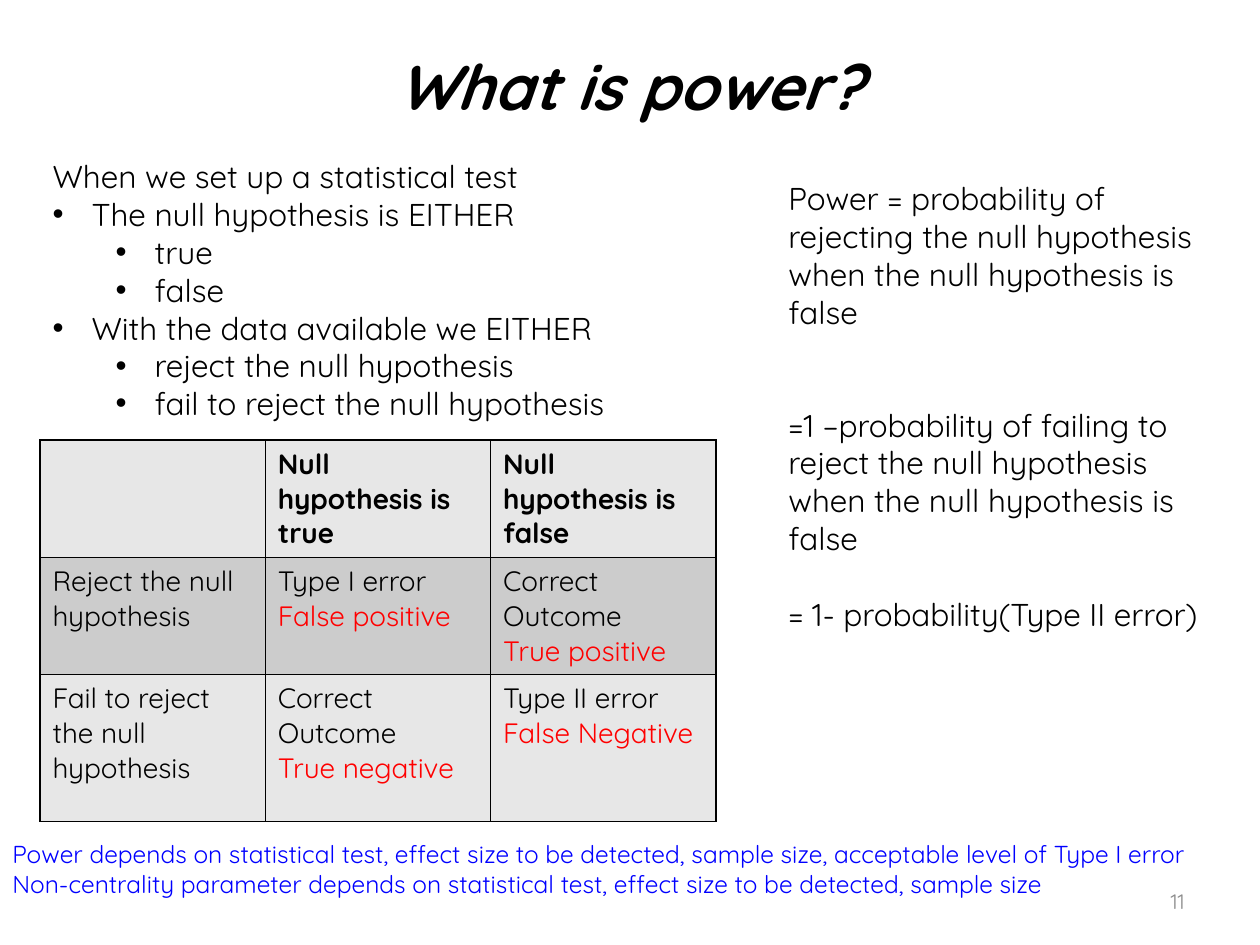
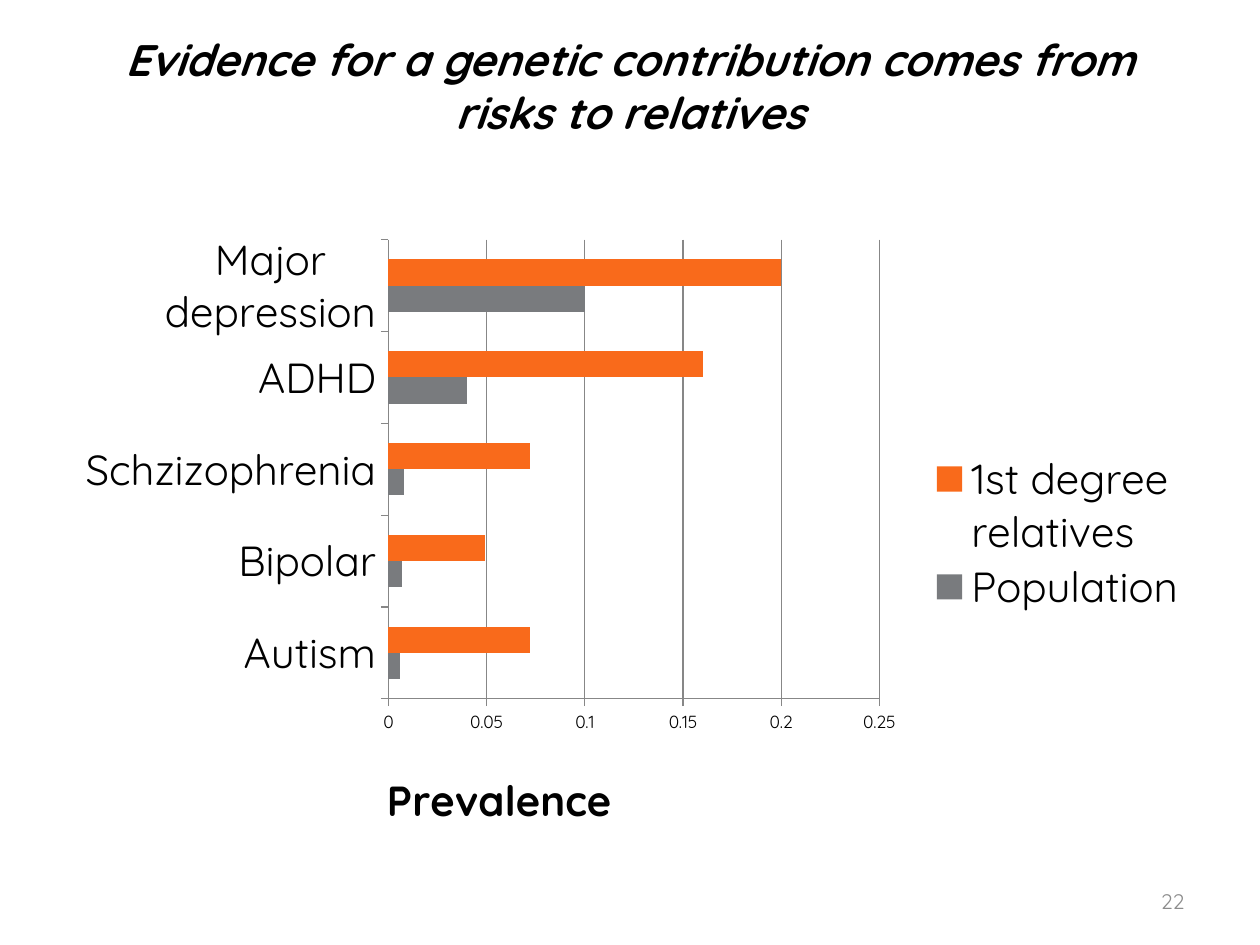
from dataclasses import dataclass

from lxml.etree import SubElement
from pptx import Presentation
from pptx.chart.data import CategoryChartData
from pptx.dml.color import RGBColor
from pptx.enum.chart import XL_CHART_TYPE, XL_LEGEND_POSITION, XL_TICK_MARK
from pptx.enum.text import MSO_ANCHOR, MSO_AUTO_SIZE, PP_ALIGN
from pptx.oxml import parse_xml
from pptx.oxml.ns import nsdecls, qn
from pptx.util import Emu, Pt

FONT = "Quicksand"
BLACK, RED, BLUE, GRAY = "000000", "FF0000", "0000FF", "8C8C8C"
LIGHT, DARK, ORANGE, SLATE, RULE = "E7E7E7", "CCCCCC", "F96A1B", "797B7E", "878787"
INCH = 126  # px to the inch
HANG = 39  # hanging indent of a bullet, px


@dataclass
class Box:
    left: int
    top: int
    width: int
    height: int

    def emu(self) -> list[Emu]:
        return [px(n) for n in (self.left, self.top, self.width, self.height)]


@dataclass
class Line:
    text: str
    level: int = -1  # -1 has no bullet
    before: int = 0  # points
    color: str = BLACK


TITLE = Box(63, 38, 1134, 94)
NUMBER = Box(903, 876, 294, 50)
PLOT = Box(388, 240, 491, 459)
KEY = Box(925, 450, 265, 166)
LABEL = Box(379, 762, 223, 46)
CHART = Box(63, 221, 1134, 624)


def px(count: float) -> Emu:
    return Emu(round(count * 914400 / INCH))


def rgb(code: str) -> RGBColor:
    return RGBColor.from_string(code)


# ---- Text ----
def style(font, size: float, color: str = BLACK, bold=False, italic=False) -> None:
    font.name, font.size = FONT, Pt(size)
    font.bold, font.italic = bold, italic
    font.color.rgb = rgb(color)


def put(para, text: str, *, align=PP_ALIGN.LEFT, before: float = 0, **form) -> None:
    para.alignment = align
    para.space_before = Pt(before)
    run = para.add_run()
    run.text = text
    style(run.font, **form)


def fill(frame, lines: list[Line], **form) -> None:
    for i, line in enumerate(lines):
        para = frame.add_paragraph() if i else frame.paragraphs[0]
        put(para, line.text, before=line.before, color=line.color, **form)


def bullet(para, level: int) -> None:
    props = para._p.get_or_add_pPr()
    if level < 0:
        props.set("marL", "0")
        props.set("indent", "0")
        SubElement(props, qn("a:buNone"))
        return
    para.level = level
    props.set("marL", str(px(HANG + 63 * level)))
    props.set("indent", str(-px(HANG)))
    SubElement(props, qn("a:buFont"), typeface="Arial")
    SubElement(props, qn("a:buChar"), char="•")


def text_box(slide, box: Box, lines: list[Line], **form):
    frame = slide.shapes.add_textbox(*box.emu()).text_frame
    frame.word_wrap = True
    fill(frame, lines, **form)
    return frame


def move(shape, box: Box) -> None:
    shape.left, shape.top, shape.width, shape.height = box.emu()
    shape.text_frame.auto_size = MSO_AUTO_SIZE.NONE


# ---- Shared slide frame ----
def start(deck, layout: int, title: str, size: float):
    slide = deck.slides.add_slide(deck.slide_layouts[layout])
    head = slide.shapes.title
    move(head, TITLE)
    head.text_frame.vertical_anchor = MSO_ANCHOR.MIDDLE
    put(head.text_frame.paragraphs[0], title, size=size, bold=True, italic=True,
        align=PP_ALIGN.CENTER)
    return slide


def number(slide, page: int) -> None:
    frame = text_box(slide, NUMBER, [Line(str(page), color=GRAY)],
                     size=12, align=PP_ALIGN.RIGHT)
    frame.vertical_anchor = MSO_ANCHOR.MIDDLE


# ---- Table ----
def border(cell) -> None:
    props = cell._tc.get_or_add_tcPr()
    for i, side in enumerate("LRTB"):
        props.insert(i, parse_xml(
            f'<a:ln{side} {nsdecls("a")} w="{Pt(1)}"><a:solidFill>'
            f'<a:srgbClr val="{BLACK}"/></a:solidFill></a:ln{side}>'))


def add_grid(slide, box: Box, highs: list[int], rows: list[list[list[Line]]]) -> None:
    table = slide.shapes.add_table(len(rows), len(rows[0]), *box.emu()).table
    table.first_row = table.horz_banding = False
    for r, (high, row) in enumerate(zip(highs, rows)):
        table.rows[r].height = px(high)
        for c, lines in enumerate(row):
            cell = table.cell(r, c)
            cell.fill.solid()
            cell.fill.fore_color.rgb = rgb(DARK if r % 2 else LIGHT)
            border(cell)
            fill(cell.text_frame, lines, size=16, bold=r == 0)


# ---- Chart ----
def place(node, index: int, box: Box, inner: bool = False, sized: bool = True) -> None:
    """Pin a chart part to a box given in slide px."""
    old = node.find(qn("c:layout"))
    if old is not None:
        node.remove(old)
    layout = parse_xml(f'<c:layout {nsdecls("c")}><c:manualLayout/></c:layout>')
    node.insert(index, layout)
    part = layout[0]
    if inner:
        SubElement(part, qn("c:layoutTarget"), val="inner")
    for axis in "xy":
        SubElement(part, qn(f"c:{axis}Mode"), val="edge")
    spots = {"x": (box.left - CHART.left) / CHART.width,
             "y": (box.top - CHART.top) / CHART.height}
    if sized:
        spots |= {"w": box.width / CHART.width, "h": box.height / CHART.height}
    for key, val in spots.items():
        SubElement(part, qn(f"c:{key}"), val=f"{val:.3f}")


def add_bars(slide, names: list[str], series: list[tuple[str, str, list[float]]]) -> None:
    data = CategoryChartData()
    data.categories = names
    for name, _, vals in series:
        data.add_series(name, vals)
    chart = slide.shapes.add_chart(
        XL_CHART_TYPE.BAR_CLUSTERED, *CHART.emu(), data).chart
    chart.has_title = False
    style(chart.font, 10)

    plot = chart.plots[0]
    plot.gap_width, plot.overlap, plot.vary_by_categories = 150, 0, False
    for bars, (_, color, _) in zip(plot.series, series):
        bars.format.fill.solid()
        bars.format.fill.fore_color.rgb = rgb(color)
    place(chart._chartSpace.chart.plotArea, 0, PLOT, inner=True)

    cats, vals = chart.category_axis, chart.value_axis
    for axis, size in ((cats, 24), (vals, 10)):
        style(axis.tick_labels.font, size)
        axis.major_tick_mark = XL_TICK_MARK.OUTSIDE
        axis.format.line.color.rgb = rgb(RULE)
    vals.minimum_scale, vals.maximum_scale, vals.major_unit = 0, 0.25, 0.05
    vals.has_major_gridlines = True
    vals.major_gridlines.format.line.color.rgb = rgb(RULE)
    put(vals.axis_title.text_frame.paragraphs[0], "Prevalence", size=24, bold=True)
    place(vals.axis_title._element, 1, LABEL, sized=False)

    chart.has_legend = True
    chart.legend.position = XL_LEGEND_POSITION.RIGHT
    chart.legend.include_in_layout = False
    style(chart.legend.font, 24)
    place(chart.legend._element, 1, KEY)


# ---- Slides ----
def power(deck) -> None:
    slide = start(deck, 1, "What is power?", 36)
    lines = [
        Line("When we set up a statistical test"),
        Line("The null hypothesis is EITHER", 0),
        Line("true", 1),
        Line("false", 1),
        Line("With the data available we EITHER", 0),
        Line("reject the null hypothesis", 1),
        Line("fail to reject the null hypothesis", 1),
    ]
    body = slide.placeholders[1]
    move(body, Box(40, 151, 1176, 280))
    fill(body.text_frame, lines, size=18)
    for para, line in zip(body.text_frame.paragraphs, lines):
        bullet(para, line.level)

    def result(text: str, note: str) -> list[Line]:
        return [Line(text), Line(note, color=RED)]

    add_grid(slide, Box(40, 440, 676, 376), [116, 113, 147], [
        [[], [Line("Null hypothesis is true")], [Line("Null hypothesis is false")]],
        [[Line("Reject the null hypothesis")],
         result("Type I error", "False positive"),
         result("Correct Outcome", "True positive")],
        [[Line("Fail to reject the null hypothesis")],
         result("Correct Outcome", "True negative"),
         result("Type II error", "False Negative")],
    ])
    text_box(slide, Box(776, 173, 452, 471), [
        Line("Power = probability of rejecting the null hypothesis "
             "when the null hypothesis is false"),
        Line("=1 –probability of failing to reject the null hypothesis "
             "when the null hypothesis is false", before=43),
        Line("= 1- probability(Type II error)", before=22),
    ], size=18)
    text_box(slide, Box(0, 833, 1260, 102), [
        Line("Power depends on statistical test, effect size to be detected, "
             "sample size, acceptable level of Type I error", color=BLUE),
        Line("Non-centrality parameter depends on statistical test, "
             "effect size to be detected, sample size", color=BLUE),
    ], size=14)
    number(slide, 11)


def risk(deck) -> None:
    slide = start(deck, 5, "Evidence for a genetic contribution comes from "
                  "risks to relatives", 25.2)
    add_bars(slide, ["Autism", "Bipolar", "Schzizophrenia", "ADHD", "Major depression"], [
        ("Population", SLATE, [0.006, 0.007, 0.008, 0.04, 0.1]),
        ("1st degree relatives", ORANGE, [0.072, 0.049, 0.072, 0.16, 0.2]),
    ])
    number(slide, 22)


def main() -> None:
    deck = Presentation()
    deck.slide_width, deck.slide_height = px(1260), px(945)
    power(deck)
    risk(deck)
    deck.save("out.pptx")


if __name__ == "__main__":
    main()
